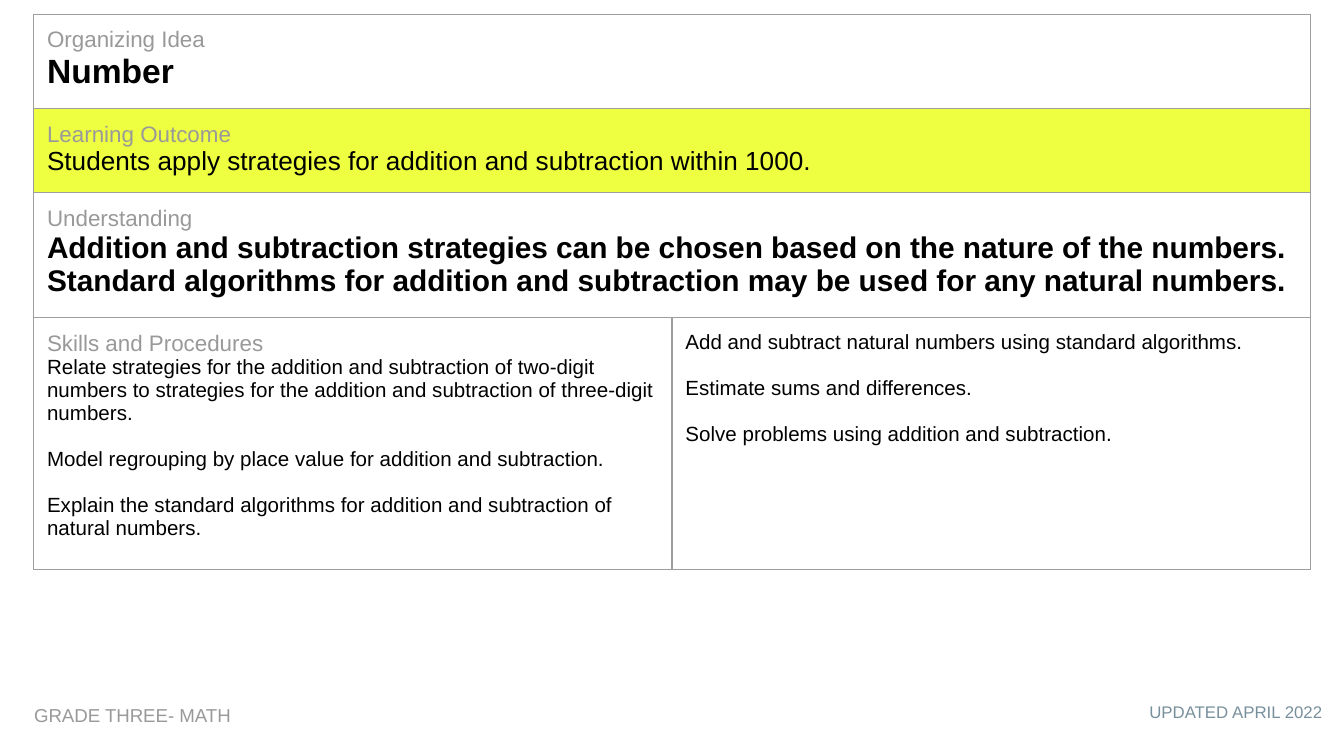
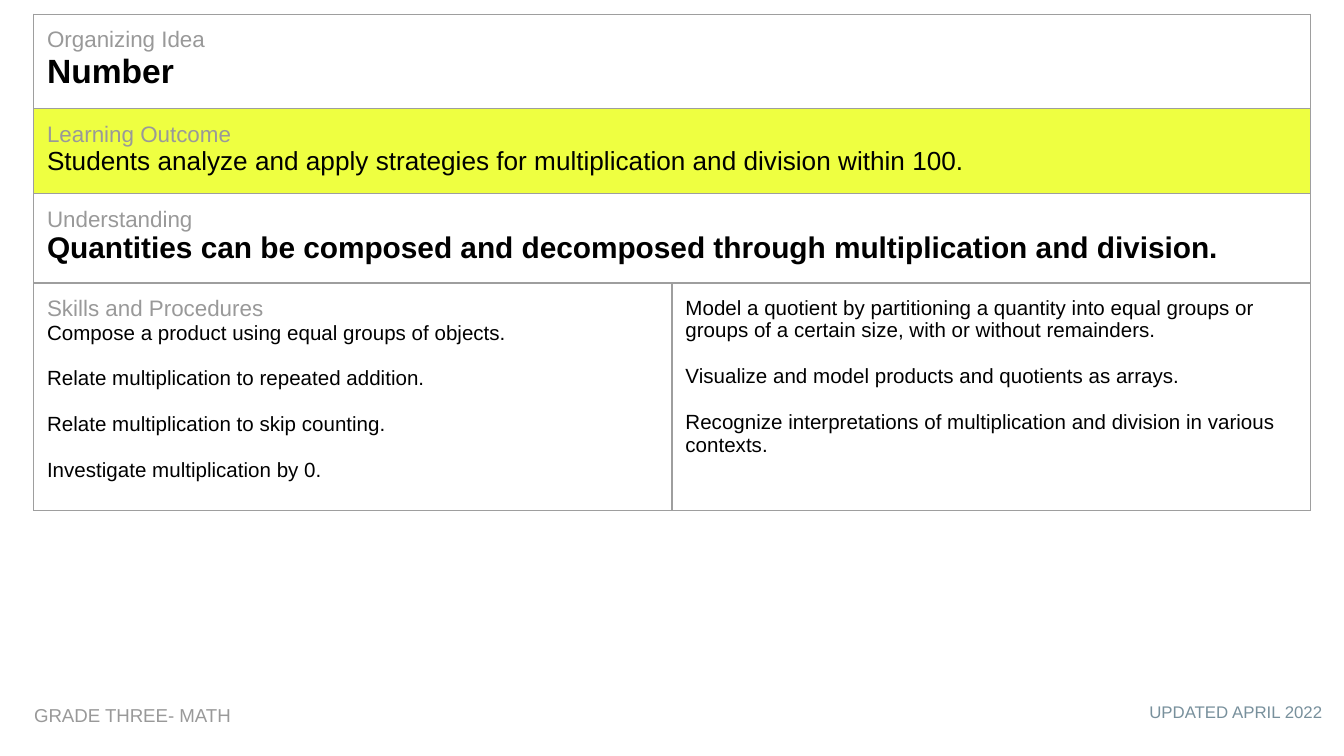
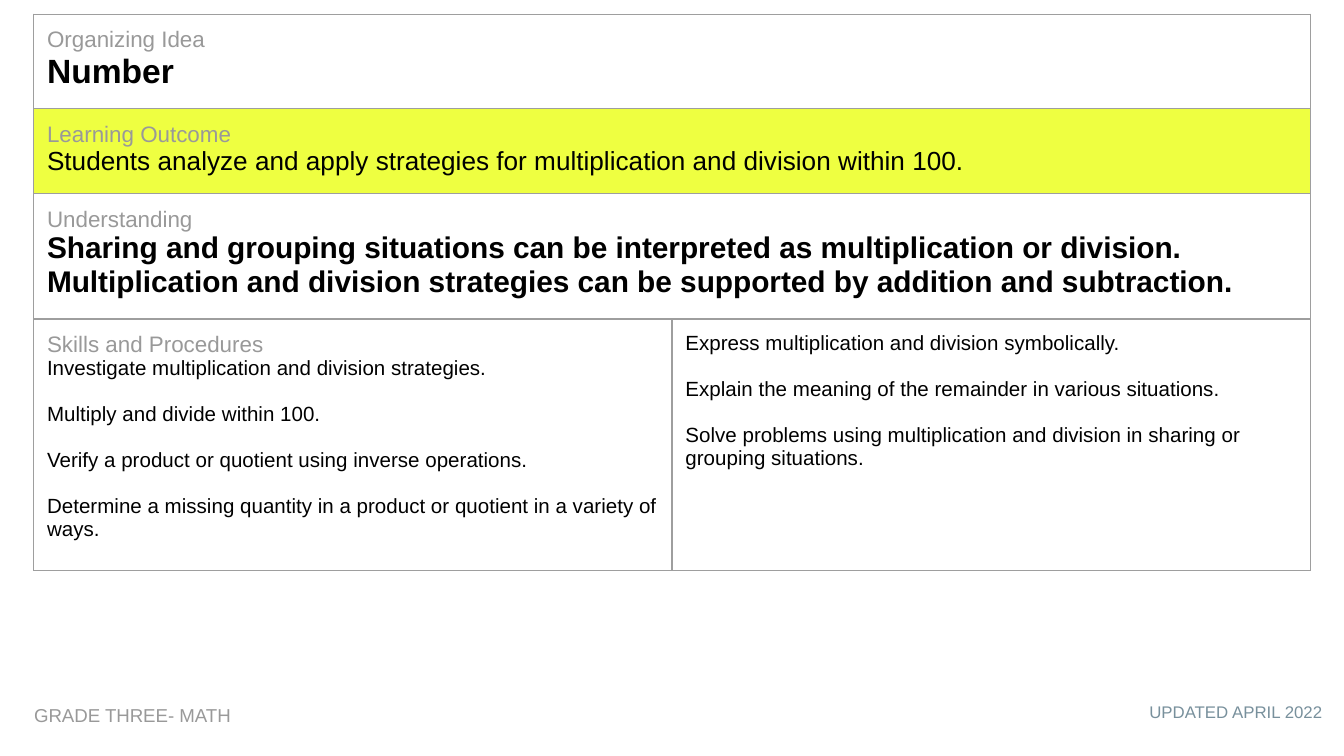
"""Build three grade three math curriculum pages, each a table with two footers."""
from lxml import etree
from pptx import Presentation
from pptx.dml.color import RGBColor
from pptx.enum.text import MSO_AUTO_SIZE, PP_ALIGN
from pptx.oxml.ns import qn
from pptx.util import Pt

PX = 4572
FONT = "Arial"
LEFT, RIGHT = PP_ALIGN.LEFT, PP_ALIGN.RIGHT
GROW = MSO_AUTO_SIZE.SHAPE_TO_FIT_TEXT
COLORS = {"text": "000000", "label": "999999", "date": "78909C",
          "outcome": "EEFF41", "border": "9E9E9E"}
MARGIN = 20
TABLE_LEFT, TABLE_TOP, COLUMN_WIDTH = 50, 21, 950
IDEA_HEIGHT, OUTCOME_HEIGHT = 140, 126
SKILL_GAP = Pt(12.3)
FOOTERS = [
    ("UPDATED APRIL 2022", (1447, 1029, 540, 70), 9, "date", RIGHT),
    ("GRADE THREE- MATH", (31, 1031, 602, 74), 10, "label", LEFT),
]
MULTIPLICATION = ("Students analyze and apply strategies for multiplication "
                  "and division within 100.")
PAGES = [
    {
        "outcome": "Students apply strategies for addition and subtraction within 1000.",
        "understanding": "Addition and subtraction strategies can be chosen based on the "
                         "nature of the numbers. Standard algorithms for addition and "
                         "subtraction may be used for any natural numbers.",
        "left": ["Relate strategies for the addition and subtraction of two-digit numbers "
                 "to strategies for the addition and subtraction of three-digit numbers.",
                 "Model regrouping by place value for addition and subtraction.",
                 "Explain the standard algorithms for addition and subtraction of "
                 "natural numbers."],
        "right": ["Add and subtract natural numbers using standard algorithms.",
                  "Estimate sums and differences.",
                  "Solve problems using addition and subtraction."],
        "heights": (186, 374),
    },
    {
        "outcome": MULTIPLICATION,
        "understanding": "Quantities can be composed and decomposed through "
                         "multiplication and division.",
        "left": ["Compose a product using equal groups of objects.",
                 "Relate multiplication to repeated addition.",
                 "Relate multiplication to skip counting.",
                 "Investigate multiplication by 0."],
        "right": ["Model a quotient by partitioning a quantity into equal groups or "
                  "groups of a certain size, with or without remainders.",
                  "Visualize and model products and quotients as arrays.",
                  "Recognize interpretations of multiplication and division in "
                  "various contexts."],
        "heights": (132, 338),
    },
    {
        "outcome": MULTIPLICATION,
        "understanding": "Sharing and grouping situations can be interpreted as "
                         "multiplication or division. Multiplication and division "
                         "strategies can be supported by addition and subtraction.",
        "left": ["Investigate multiplication and division strategies.",
                 "Multiply and divide within 100.",
                 "Verify a product or quotient using inverse operations.",
                 "Determine a missing quantity in a product or quotient in a "
                 "variety of ways."],
        "right": ["Express multiplication and division symbolically.",
                  "Explain the meaning of the remainder in various situations.",
                  "Solve problems using multiplication and division in sharing or "
                  "grouping situations."],
        "heights": (186, 374),
    },
]


def write(frame, lines, size, color="text", bold=False, label=None,
          same_paragraph=False, align=LEFT):
    entries = [(line, size, color, bold) for line in lines]
    if label:
        entries.insert(0, (label, 12, "label", False))
    first_gap = 2 if label else 1
    para = frame.paragraphs[0]
    for index, (text, points, shade, heavy) in enumerate(entries):
        if index and same_paragraph:
            para.add_line_break()
            styled = para.add_run()
        else:
            para = frame.add_paragraph() if index else para
            para.alignment = align
            para.space_before = SKILL_GAP if index >= first_gap else Pt(0)
            styled = para
        styled.text = text
        styled.font.name = FONT
        styled.font.size = Pt(points)
        styled.font.bold = heavy
        styled.font.color.rgb = RGBColor.from_string(COLORS[shade])


def style_cell(cell, fill=None):
    cell.margin_left = cell.margin_right = MARGIN * PX
    cell.margin_top = cell.margin_bottom = MARGIN * PX
    properties = cell._tc.get_or_add_tcPr()
    for side in ("a:lnL", "a:lnR", "a:lnT", "a:lnB"):
        line = etree.SubElement(properties, qn(side), w=str(Pt(0.75)))
        solid = etree.SubElement(line, qn("a:solidFill"))
        etree.SubElement(solid, qn("a:srgbClr"), val=COLORS["border"])
    if fill:
        cell.fill.solid()
        cell.fill.fore_color.rgb = RGBColor.from_string(COLORS[fill])
    else:
        cell.fill.background()


deck = Presentation()
deck.slide_width, deck.slide_height = 2000 * PX, 1125 * PX

for content in PAGES:
    page = deck.slides.add_slide(deck.slide_layouts[6])

    heights = (IDEA_HEIGHT, OUTCOME_HEIGHT, *content["heights"])
    table = page.shapes.add_table(
        len(heights), 2, TABLE_LEFT * PX, TABLE_TOP * PX,
        2 * COLUMN_WIDTH * PX, sum(heights) * PX).table
    table.first_row = table.horz_banding = False
    for column in table.columns:
        column.width = COLUMN_WIDTH * PX
    for index, height in enumerate(heights):
        table.rows[index].height = height * PX
        for cell in table.rows[index].cells:
            style_cell(cell, "outcome" if index == 1 else None)

    headings = [
        ("Organizing Idea", "Number", 18, True, True),
        ("Learning Outcome", content["outcome"], 14, False, True),
        ("Understanding", content["understanding"], 16, True, False),
    ]
    for index, (label, text, size, bold, same_paragraph) in enumerate(headings):
        table.cell(index, 0).merge(table.cell(index, 1))
        write(table.cell(index, 0).text_frame, [text], size, bold=bold, label=label,
              same_paragraph=same_paragraph)
    write(table.cell(3, 0).text_frame, content["left"], 11, label="Skills and Procedures")
    write(table.cell(3, 1).text_frame, content["right"], 11)

    for text, place, size, color, align in FOOTERS:
        box = page.shapes.add_textbox(*(length * PX for length in place))
        frame = box.text_frame
        frame.word_wrap = True
        frame.auto_size = GROW
        frame.margin_left = frame.margin_right = MARGIN * PX
        frame.margin_top = frame.margin_bottom = MARGIN * PX
        write(frame, [text], size, color, align=align)

deck.save("out.pptx")
